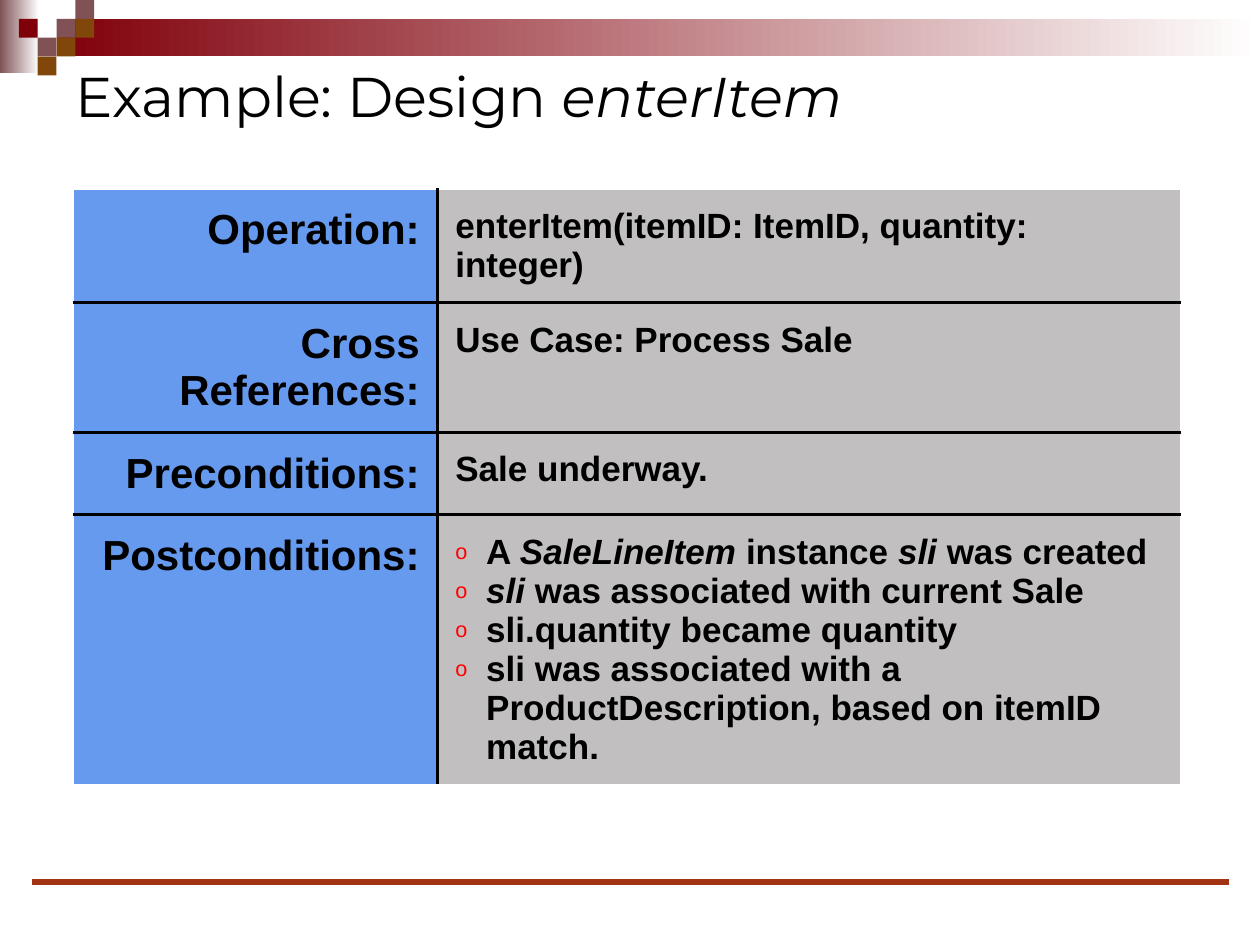
from lxml import etree
from pptx import Presentation
from pptx.dml.color import RGBColor
from pptx.enum.shapes import MSO_CONNECTOR, MSO_SHAPE
from pptx.enum.text import MSO_ANCHOR, PP_ALIGN
from pptx.oxml.ns import qn
from pptx.util import Cm, Pt

LEFT, RIGHT = PP_ALIGN.LEFT, PP_ALIGN.RIGHT
MIDDLE, TOP = MSO_ANCHOR.MIDDLE, MSO_ANCHOR.TOP
RECTANGLE, STRAIGHT = MSO_SHAPE.RECTANGLE, MSO_CONNECTOR.STRAIGHT

MAROON, MAUVE, BROWN = "80000A", "805255", "81460A"
BLACK, WHITE, RED, RUST = "000000", "FFFFFF", "FF0000", "A13214"
BLUE, GRAY = ("0057E5", 60), ("544E51", 36)  # colour and opacity in percent
SQUARE = 0.38


def color(value):
    return RGBColor.from_string(value)


def apply(target, values):
    for name, value in values.items():
        setattr(target, name, value)


def add_xml(parent, tag, **values):
    return etree.SubElement(parent, qn(tag), values)


class SlideBuilder:
    title_font = {"name": "Montserrat", "size": Pt(32), "bold": False}
    label_font = {"name": "Arial", "size": Pt(24), "bold": True}
    value_font = {"name": "Arial", "size": Pt(20), "bold": True}
    cell_margins = {f"margin_{side}": Cm(0.36)
                    for side in ("left", "right", "top", "bottom")}

    def __init__(self, slide):
        self.slide = slide

    def add_spans(self, para, spans, font):
        """Add spans of text; every second one is italic."""
        for index, text in enumerate(spans):
            if text:
                span = para.add_run()
                span.text = text
                apply(span.font, {**font, "italic": index % 2 == 1})
                span.font.color.rgb = color(BLACK)

    def title(self, spans, left, top, width, height):
        box = self.slide.shapes.title
        apply(box, {"left": Cm(left), "top": Cm(top),
                    "width": Cm(width), "height": Cm(height)})
        apply(box.text_frame, {"vertical_anchor": MIDDLE, "word_wrap": True})
        para = box.text_frame.paragraphs[0]
        para.alignment = LEFT
        self.add_spans(para, spans, self.title_font)

    def rectangle(self, left, top, width, height, *fills):
        """Fill with one colour, or fade from the first to the second."""
        box = self.slide.shapes.add_shape(
            RECTANGLE, Cm(left), Cm(top), Cm(width), Cm(height))
        box.shadow.inherit = False
        box.line.fill.background()
        if len(fills) == 1:
            box.fill.solid()
            box.fill.fore_color.rgb = color(fills[0])
        else:
            box.fill.gradient()
            box.fill.gradient_angle = 0
            for stop, value in zip(box.fill.gradient_stops, fills):
                stop.color.rgb = color(value)

    def line(self, left, right, y, value, width):
        rule = self.slide.shapes.add_connector(
            STRAIGHT, Cm(left), Cm(y), Cm(right), Cm(y))
        rule.line.color.rgb = color(value)
        rule.line.width = Pt(width)
        add_xml(rule._element.spPr, "a:effectLst")

    def bullet(self, para):
        props = para._p.get_or_add_pPr()
        props.set("marL", str(Cm(0.62)))
        props.set("indent", str(-Cm(0.62)))
        add_xml(add_xml(props, "a:buClr"), "a:srgbClr", val=RED)
        add_xml(props, "a:buSzPct", val="62000")
        add_xml(props, "a:buFont", typeface="Arial")
        add_xml(props, "a:buChar", char="o")

    def cell(self, cell, paras, font, align, fill, borders, bulleted):
        apply(cell, {**self.cell_margins, "vertical_anchor": TOP})
        for index, spans in enumerate(paras):
            frame = cell.text_frame
            para = frame.add_paragraph() if index else frame.paragraphs[0]
            para.alignment = align
            if bulleted:
                self.bullet(para)
            self.add_spans(para, spans, font)

        # Translucent fill
        value, opacity = fill
        cell.fill.solid()
        cell.fill.fore_color.rgb = color(value)
        props = cell._tc.get_or_add_tcPr()
        add_xml(next(props.iter(qn("a:srgbClr"))), "a:alpha",
                val=str(opacity * 1000))

        # Borders come before the fill, in the order L, R, T, B
        for index, side in enumerate(borders):
            edge = etree.Element(qn(f"a:ln{side}"), {"w": str(Pt(2))})
            add_xml(add_xml(edge, "a:solidFill"), "a:srgbClr", val=BLACK)
            props.insert(index, edge)

    def table(self, rows, left, top, widths, heights):
        frame = self.slide.shapes.add_table(
            len(rows), 2, Cm(left), Cm(top), Cm(sum(widths)), Cm(sum(heights)))
        table = frame.table
        apply(table, {"first_row": False, "horz_banding": False})
        for column, width in zip(table.columns, widths):
            column.width = Cm(width)
        for row, height in zip(table.rows, heights):
            row.height = Cm(height)
        for index, (label, paras) in enumerate(rows):
            inner = "T" * (index > 0) + "B" * (index < len(rows) - 1)
            self.cell(table.cell(index, 0), [[label]], self.label_font,
                      RIGHT, BLUE, "R" + inner, False)
            self.cell(table.cell(index, 1), paras, self.value_font,
                      LEFT, GRAY, "L" + inner, len(paras) > 1)


def main():
    deck = Presentation()
    deck.slide_width, deck.slide_height = Cm(25.4), Cm(19.05)
    builder = SlideBuilder(deck.slides.add_slide(deck.slide_layouts[5]))

    # Header bands and the mosaic of squares (column, row)
    builder.rectangle(0, 0, 0.79, 1.47, MAUVE, WHITE)
    builder.rectangle(1.14, SQUARE, 24.26, 2 * SQUARE, MAROON, WHITE)
    mosaic = {MAUVE: [(3, 1), (4, 0), (2, 2)],
              BROWN: [(4, 1), (3, 2), (2, 3)],
              MAROON: [(1, 1)]}
    for value, places in mosaic.items():
        for column, row in places:
            builder.rectangle(column * SQUARE, row * SQUARE,
                              SQUARE, SQUARE, value)

    # Footer rule
    builder.line(0.64, 24.77, 17.78, RUST, 3)

    builder.title(["Example: Design ", "enterItem"], 1.27, 1.07, 22.86, 1.7)

    # Operation contract
    contract = [
        ("Operation:", [["enterItem(itemID: ItemID, quantity: integer)"]]),
        ("Cross References:", [["Use Case: Process Sale"]]),
        ("Preconditions:", [["Sale underway."]]),
        ("Postconditions:", [
            ["A ", "SaleLineItem ", "instance ", "sli ", "was created"],
            ["", "sli ", "was associated with current Sale"],
            ["sli.quantity became quantity"],
            ["sli was associated with a ProductDescription, "
             "based on itemID match."],
        ]),
    ]
    builder.table(contract, 1.48, 3.81, [7.34, 14.98],
                  [2.26, 2.59, 1.65, 5.42])

    deck.save("out.pptx")


if __name__ == "__main__":
    main()
